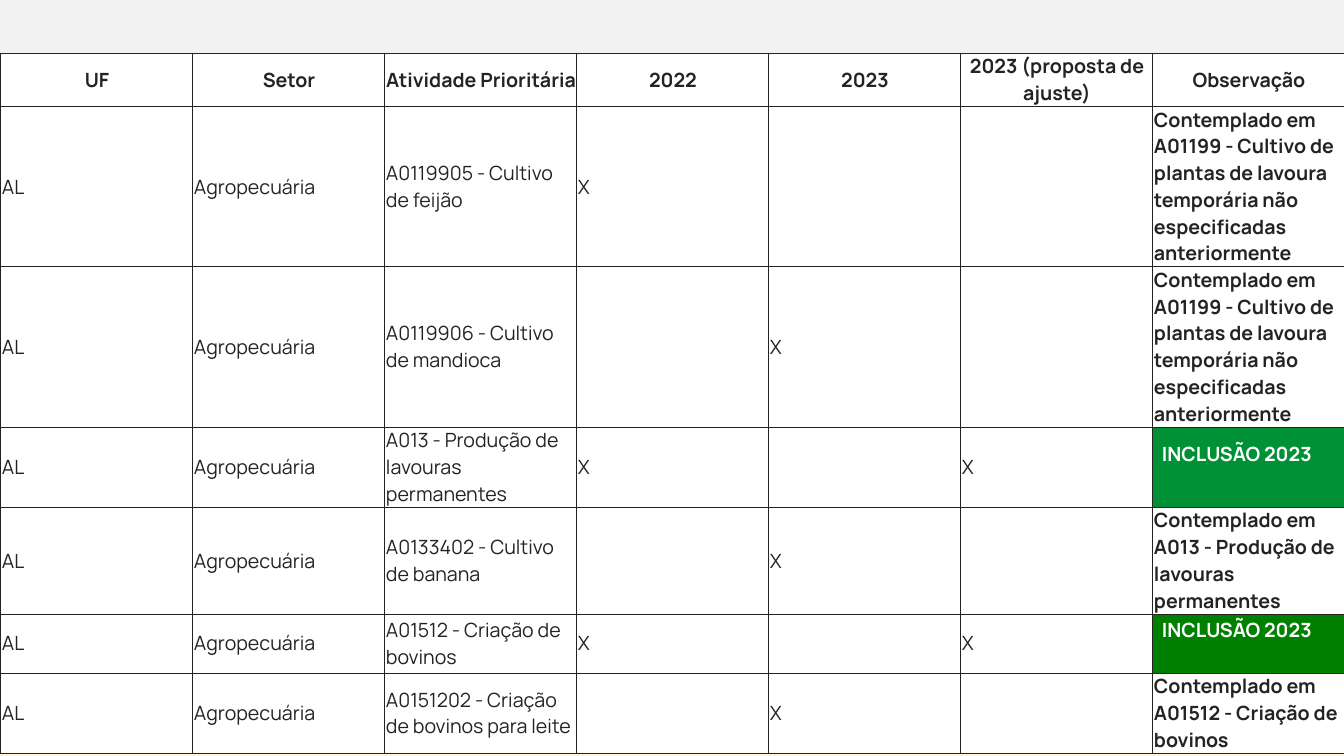
from lxml import etree
from pptx import Presentation
from pptx import util as u
from pptx.dml.color import RGBColor
from pptx.enum import text
from pptx.oxml import ns

PX = 914400 / 50.4
INK = RGBColor(0x23, 0x24, 0x22)
WHITE = RGBColor(0xFF, 0xFF, 0xFF)
GREY = RGBColor(0xF2, 0xF2, 0xF2)
CREAM = RGBColor(0xFC, 0xF7, 0xDA)
GREEN = RGBColor(0x00, 0x90, 0x35)
DARK_GREEN = RGBColor(0x00, 0x80, 0x00)

TOP = 53
COL_WIDTH = 192
ROW_HEIGHTS = [47, 141, 141, 71, 94, 59, 71]
HEADERS = ["UF", "Setor", "Atividade Prioritária", "2022", "2023",
           "2023 (proposta de ajuste)", "Observação"]
TEMPORARY = ("Contemplado em A01199 - Cultivo de plantas de lavoura "
             "temporária não especificadas anteriormente")
ADDED = "INCLUSÃO 2023"
# activity, marks for 2022 / 2023 / proposal, note, note fill
ACTIVITIES = [
    ("A0119905 - Cultivo de feijão", ("X", "", ""), TEMPORARY, WHITE),
    ("A0119906 - Cultivo de mandioca", ("", "X", ""), TEMPORARY, WHITE),
    ("A013 - Produção de lavouras permanentes", ("X", "", "X"), ADDED, GREEN),
    ("A0133402 - Cultivo de banana", ("", "X", ""),
     "Contemplado em A013 - Produção de lavouras permanentes", WHITE),
    ("A01512 - Criação de bovinos", ("X", "", "X"), ADDED, DARK_GREEN),
    ("A0151202 - Criação de bovinos para leite", ("", "X", ""),
     "Contemplado em A01512 - Criação de bovinos", WHITE),
]


def px(n):
    return u.Emu(round(n * PX))


def write_cell(cell, words, bold=False, color=INK, fill=WHITE,
               align=text.PP_ALIGN.LEFT, left=2, bottom=0):
    """Format one table cell: borders, fill, margins (px) and text."""
    tcPr = cell._tc.get_or_add_tcPr()
    for side in ("a:lnL", "a:lnR", "a:lnT", "a:lnB"):
        ln = etree.SubElement(tcPr, ns.qn(side), w=str(u.Pt(1)))
        solid = etree.SubElement(ln, ns.qn("a:solidFill"))
        etree.SubElement(solid, ns.qn("a:srgbClr"), val=str(INK))
    cell.fill.solid()
    cell.fill.fore_color.rgb = fill
    cell.margin_left, cell.margin_bottom = px(left), px(bottom)
    cell.margin_right = cell.margin_top = 0
    cell.vertical_anchor = text.MSO_ANCHOR.MIDDLE
    if words:
        p = cell.text_frame.paragraphs[0]
        p.alignment = align
        r = p.add_run()
        r.text = words
        r.font.name, r.font.size, r.font.bold = "Manrope", u.Pt(28), bold
        r.font.color.rgb = color


prs = Presentation()
prs.slide_width, prs.slide_height = px(1344), px(756)
s = prs.slides.add_slide(prs.slide_layouts[6])

bg = s.background.fill
bg.gradient()
bg.gradient_angle = 270
for stop, color, position in zip(bg.gradient_stops, (GREY, CREAM), (0.47, 1)):
    stop.color.rgb = color
    stop.position = position

table = s.shapes.add_table(
    len(ROW_HEIGHTS), len(HEADERS), 0, px(TOP),
    px(COL_WIDTH * len(HEADERS)), px(sum(ROW_HEIGHTS))).table
table.first_row = table.horz_banding = False
for column in table.columns:
    column.width = px(COL_WIDTH)
for row, height in zip(table.rows, ROW_HEIGHTS):
    row.height = px(height)

for col, header in enumerate(HEADERS):
    write_cell(table.cell(0, col), header, bold=True,
               align=text.PP_ALIGN.CENTER)

for row, (activity, marks, note, fill) in enumerate(ACTIVITIES, start=1):
    for col, words in enumerate(("AL", "Agropecuária", activity, *marks)):
        write_cell(table.cell(row, col), words)
    note_cell = table.cell(row, len(HEADERS) - 1)
    if note == ADDED:
        write_cell(note_cell, note, bold=True, color=WHITE, fill=fill,
                   left=10, bottom=27)
    else:
        write_cell(note_cell, note, bold=True, fill=fill)

prs.save("out.pptx")
